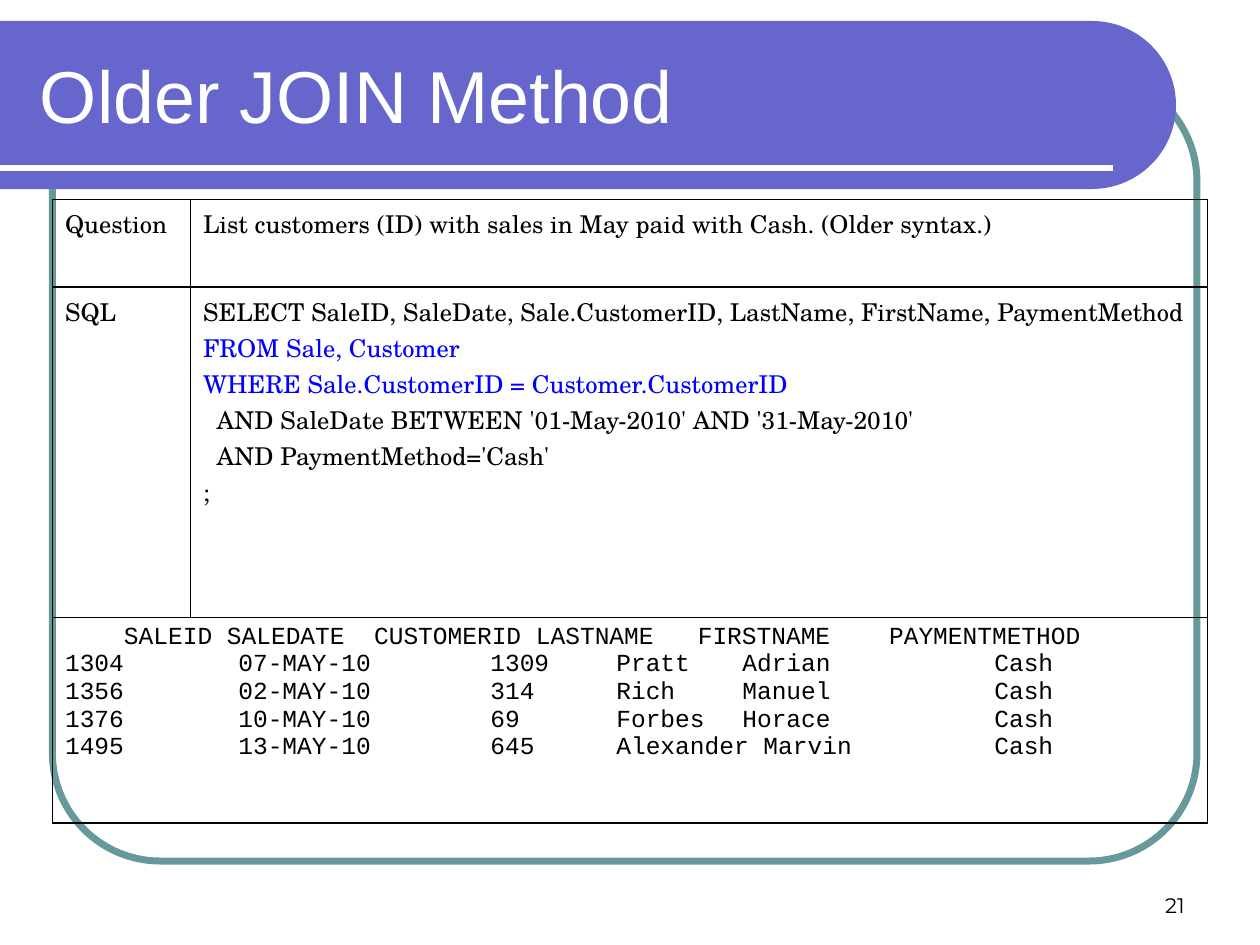
import math
import pptx
import pptx.dml.color
import pptx.enum.shapes
import pptx.enum.text
import pptx.oxml
import pptx.oxml.ns
import pptx.util

RGB = pptx.dml.color.RGBColor
Pt = pptx.util.Pt
SHAPE = pptx.enum.shapes.MSO_SHAPE
ANCHOR = pptx.enum.text.MSO_ANCHOR

TEAL = RGB(0x66, 0x99, 0x99)
VIOLET = RGB(0x66, 0x66, 0xCC)
WHITE = RGB(0xFF, 0xFF, 0xFF)
BLACK = RGB(0, 0, 0)
BLUE = RGB(0, 0, 0xFF)
SERIF = "TeX Gyre Schola"
MONO = "Courier New"

deck = pptx.Presentation()
deck.slide_width = pptx.util.Inches(10)
deck.slide_height = pptx.util.Inches(7.5)
slide = deck.slides.add_slide(deck.slide_layouts[5])
shapes = slide.shapes
unit = deck.slide_width // 120  # the slide is 120 by 90 units


def grid(*cells):
    return [round(cell * unit) for cell in cells]


def write(frame, lines, face, size, color, hang=0):
    for i, line in enumerate(lines):
        para = frame.paragraphs[0] if i == 0 else frame.add_paragraph()
        para.text = line
        para.font.name = face
        para.font.size = Pt(size)
        para.font.color.rgb = color
        if hang:
            props = para._p.get_or_add_pPr()
            props.set("marL", str(hang))
            props.set("indent", str(-hang))
            props.set("defTabSz", str(12 * unit))


# Rounded frame
frame = shapes.add_shape(SHAPE.ROUNDED_RECTANGLE, *grid(5, 7, 109, 75))
frame.adjustments[0] = 0.137
frame.shadow.inherit = False
frame.fill.background()
frame.line.color.rgb = TEAL
frame.line.width = Pt(4)

# Title band with a round right end
arc = [math.radians(deg) for deg in range(-90, 91, 3)]
edge = [grid(104 + 8 * math.cos(a), 10 + 8 * math.sin(a)) for a in arc]
pen = shapes.build_freeform(*grid(0, 2))
pen.add_line_segments(edge + [grid(0, 18)], close=True)
band = pen.convert_to_shape()
band.shadow.inherit = False
band.fill.solid()
band.fill.fore_color.rgb = VIOLET
band.line.fill.background()

# White rule
rule = shapes.add_connector(
    pptx.enum.shapes.MSO_CONNECTOR.STRAIGHT, *grid(0, 16, 106, 16))
rule.line.color.rgb = WHITE
rule.line.width = Pt(3)
rule._element.spPr.append(pptx.oxml.parse_xml(
    f"<a:effectLst {pptx.oxml.ns.nsdecls('a')}/>"))

# Title, moved above the band
title = shapes.title
title.left, title.top, title.width, title.height = grid(2.6, 3, 105.2, 12)
shapes._spTree.append(title._element)
title.text_frame.vertical_anchor = ANCHOR.MIDDLE
write(title.text_frame, ["Older JOIN Method"], "Arial", 42, WHITE)
title.text_frame.paragraphs[0].alignment = pptx.enum.text.PP_ALIGN.LEFT

# Slide number
page = shapes.add_textbox(*grid(86, 82, 28, 6)).text_frame
page.word_wrap = True
page.vertical_anchor = ANCHOR.BOTTOM
write(page, ["21"], "Montserrat", 12, BLACK)
page.paragraphs[0].alignment = pptx.enum.text.PP_ALIGN.RIGHT

# Table
table = shapes.add_table(3, 2, *grid(5, 19, 110, 59.4)).table
table.first_row = table.horz_banding = False
for col, width in zip(table.columns, grid(13.15, 96.85)):
    col.width = width
for row, height in zip(table.rows, grid(8.35, 31.45, 19.6)):
    row.height = height
table.cell(2, 0).merge(table.cell(2, 1))

for cell in (table.cell(r, c) for r in range(3) for c in range(2)):
    props = cell._tc.get_or_add_tcPr()
    for side in "LRTB":
        props.append(pptx.oxml.parse_xml(
            f'<a:ln{side} {pptx.oxml.ns.nsdecls("a")} w="12700"><a:solidFill>'
            f'<a:srgbClr val="{BLACK}"/></a:solidFill></a:ln{side}>'))
    cell.fill.background()

# Question and query
query = [
    "SELECT SaleID, SaleDate, Sale.CustomerID, LastName, FirstName, PaymentMethod",
    "FROM Sale, Customer",
    "WHERE Sale.CustomerID = Customer.CustomerID",
    "  AND SaleDate BETWEEN '01-May-2010' AND '31-May-2010'",
    "  AND PaymentMethod='Cash'",
    ";",
]
ask = "List customers (ID) with sales in May paid with Cash. (Older syntax.)"
hang = grid(4.5)[0]
for r, pair in enumerate([(["Question"], [ask]), (["SQL"], query)]):
    for c, lines in enumerate(pair):
        write(table.cell(r, c).text_frame, lines, SERIF, 14, BLACK, hang)
for para in table.cell(1, 1).text_frame.paragraphs[1:3]:
    para.font.color.rgb = BLUE

# Query result
sales = [
    "    SALEID SALEDATE  CUSTOMERID LASTNAME   FIRSTNAME    PAYMENTMETHOD",
    "1304\t07-MAY-10\t1309\tPratt\tAdrian\t\tCash",
    "1356\t02-MAY-10\t314\tRich\tManuel\t\tCash",
    "1376\t10-MAY-10\t69\tForbes\tHorace\t\tCash",
    "1495\t13-MAY-10\t645\tAlexander Marvin\t\tCash",
]
write(table.cell(2, 0).text_frame, sales, MONO, 14, BLACK, hang)

deck.save("out.pptx")
